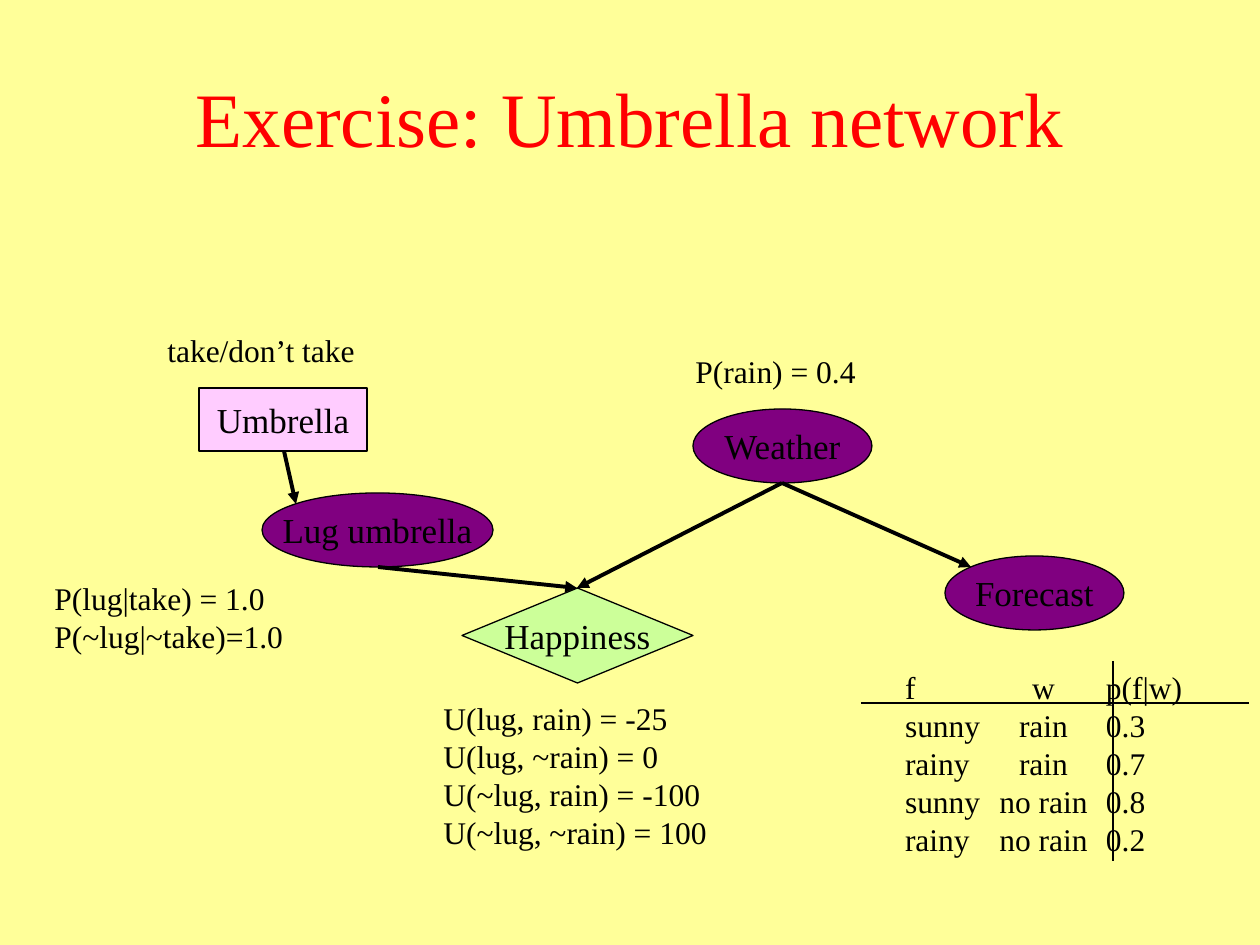
"""Builds the umbrella decision network exercise slide."""
from dataclasses import dataclass

from lxml import etree
from pptx import Presentation
from pptx.dml.color import RGBColor
from pptx.enum.shapes import MSO_CONNECTOR, MSO_SHAPE
from pptx.enum.text import MSO_ANCHOR, MSO_AUTO_SIZE, PP_ALIGN
from pptx.oxml.ns import qn
from pptx.util import Emu, Pt

STRAIGHT = MSO_CONNECTOR.STRAIGHT
OVAL, RECTANGLE, DIAMOND = MSO_SHAPE.OVAL, MSO_SHAPE.RECTANGLE, MSO_SHAPE.FLOWCHART_DECISION
MIDDLE, TOP = MSO_ANCHOR.MIDDLE, MSO_ANCHOR.TOP
LEFT, CENTER = PP_ALIGN.LEFT, PP_ALIGN.CENTER
NO_AUTOFIT = MSO_AUTO_SIZE.NONE
EMU_PER_PX = 914400 / 126
PLAIN_TABLE_STYLE = "{2D5ABB26-0587-4C30-8999-92F81FD0307C}"


@dataclass(frozen=True)
class Theme:
    font: str = "Times New Roman"
    background: str = "FFFF99"
    title: str = "FF0000"
    ink: str = "000000"
    chance: str = "800080"
    decision: str = "FFCCFF"
    utility: str = "CCFF99"
    title_size: int = 44
    node_size: int = 20
    note_size: int = 18
    note_leading: float = 21.6
    thin: float = 0.75
    thick: float = 2.25


THEME = Theme()


@dataclass(frozen=True)
class Box:
    left: int
    top: int
    width: int
    height: int

    def emu(self) -> tuple:
        return tuple(px(v) for v in (self.left, self.top, self.width, self.height))


@dataclass(frozen=True)
class Node:
    label: str
    outline: int
    fill: str
    box: Box


@dataclass(frozen=True)
class Note:
    lines: tuple
    box: Box


@dataclass(frozen=True)
class Link:
    start: tuple
    end: tuple


NODES = (
    Node("Weather", OVAL, THEME.chance, Box(693, 409, 179, 74)),
    Node("Forecast", OVAL, THEME.chance, Box(945, 556, 179, 74)),
    Node("Umbrella", RECTANGLE, THEME.decision, Box(199, 388, 168, 63)),
    Node("Happiness", DIAMOND, THEME.utility, Box(462, 588, 231, 95)),
    Node("Lug umbrella", OVAL, THEME.chance, Box(262, 493, 231, 74)),
)
ARROWS = (
    Link((782, 483), (577, 588)),
    Link((378, 567), (577, 588)),
    Link((782, 483), (971, 567)),
    Link((284, 451), (296, 504)),
)
RULES = (
    Link((861, 703), (1249, 703)),
    Link((1113, 661), (1113, 861)),
)
NOTES = (
    Note(("take/don’t take",), Box(155, 325, 215, 50)),
    Note(("P(rain) = 0.4",), Box(683, 346, 188, 50)),
    Note(("U(lug, rain) = -25", "U(lug, ~rain) = 0", "U(~lug, rain) = -100",
          "U(~lug, ~rain) = 100"), Box(431, 693, 291, 165)),
    Note(("P(lug|take) = 1.0", "P(~lug|~take)=1.0"), Box(42, 573, 257, 89)),
)
FORECAST_ROWS = (
    ("f", "w", "p(f|w)"),
    ("sunny", "rain", "0.3"),
    ("rainy", "rain", "0.7"),
    ("sunny", "no rain", "0.8"),
    ("rainy", "no rain", "0.2"),
)
FORECAST_BOX = Box(905, 668, 283, 190)
FORECAST_COLUMNS = ((76, LEFT), (125, CENTER), (82, LEFT))


def px(length: float) -> Emu:
    """Turn pixels into EMU."""
    return Emu(round(length * EMU_PER_PX))


def rgb(colour: str) -> RGBColor:
    """Turn a hex string into a colour."""
    return RGBColor.from_string(colour)


def write(paragraph, text: str, size: int, colour: str, align: int) -> None:
    """Add one formatted run to a paragraph."""
    paragraph.alignment = align
    run = paragraph.add_run()
    run.text = text
    run.font.name = THEME.font
    run.font.size = Pt(size)
    run.font.color.rgb = rgb(colour)


def write_note(paragraph, text: str, align: int = LEFT) -> None:
    """Write a line of small text at the note leading."""
    write(paragraph, text, THEME.note_size, THEME.ink, align)
    paragraph.line_spacing = Pt(THEME.note_leading)


def draw_title(slide, text: str, box: Box) -> None:
    """Place and fill the title placeholder."""
    title = slide.shapes.title
    title.left, title.top, title.width, title.height = box.emu()
    frame = title.text_frame
    frame.auto_size = NO_AUTOFIT
    frame.vertical_anchor = MIDDLE
    write(frame.paragraphs[0], text, THEME.title_size, THEME.title, CENTER)


def draw_node(slide, node: Node) -> None:
    """Draw a labelled network node."""
    shape = slide.shapes.add_shape(node.outline, *node.box.emu())
    shape.shadow.inherit = False
    shape.fill.solid()
    shape.fill.fore_color.rgb = rgb(node.fill)
    shape.line.color.rgb = rgb(THEME.ink)
    shape.line.width = Pt(THEME.thin)
    frame = shape.text_frame
    frame.word_wrap = False
    frame.vertical_anchor = MIDDLE
    write(frame.paragraphs[0], node.label, THEME.node_size, THEME.ink, CENTER)


def draw_link(slide, link: Link, weight: float, arrow: bool) -> None:
    """Draw a straight line, with an arrowhead if asked."""
    points = [px(v) for v in (*link.start, *link.end)]
    connector = slide.shapes.add_connector(STRAIGHT, *points)
    connector.line.color.rgb = rgb(THEME.ink)
    connector.line.width = Pt(weight)
    if arrow:
        outline = connector.line._get_or_add_ln()
        etree.SubElement(outline, qn("a:tailEnd"), type="triangle")
    etree.SubElement(connector._element.spPr, qn("a:effectLst"))


def draw_note(slide, note: Note) -> None:
    """Draw a text box with one paragraph a line."""
    frame = slide.shapes.add_textbox(*note.box.emu()).text_frame
    frame.word_wrap = False
    frame.vertical_anchor = TOP
    for index, line in enumerate(note.lines):
        write_note(frame.add_paragraph() if index else frame.paragraphs[0], line)


def draw_forecast_table(slide) -> None:
    """Draw the conditional probabilities as a plain table."""
    holder = slide.shapes.add_table(
        len(FORECAST_ROWS), len(FORECAST_COLUMNS), *FORECAST_BOX.emu())
    table = holder.table
    table.first_row = table.horz_banding = False
    next(holder._element.iter(qn("a:tableStyleId"))).text = PLAIN_TABLE_STYLE
    for column, (width, _) in zip(table.columns, FORECAST_COLUMNS):
        column.width = px(width)
    for row, values in zip(table.rows, FORECAST_ROWS):
        for cell, value, (_, align) in zip(row.cells, values, FORECAST_COLUMNS):
            cell.fill.background()
            cell.margin_left = cell.margin_right = 0
            cell.margin_top = cell.margin_bottom = 0
            write_note(cell.text_frame.paragraphs[0], value, align)


def main() -> None:
    """Build and save the slide."""
    deck = Presentation()
    deck.slide_width, deck.slide_height = px(1260), px(945)
    slide = deck.slides.add_slide(deck.slide_layouts[5])
    slide.background.fill.solid()
    slide.background.fill.fore_color.rgb = rgb(THEME.background)
    draw_title(slide, "Exercise: Umbrella network", Box(63, 38, 1134, 158))
    for node in NODES:
        draw_node(slide, node)
    for arrow in ARROWS:
        draw_link(slide, arrow, THEME.thick, True)
    for note in NOTES:
        draw_note(slide, note)
    draw_forecast_table(slide)
    for rule in RULES:
        draw_link(slide, rule, THEME.thin, False)
    deck.save("out.pptx")


if __name__ == "__main__":
    main()
